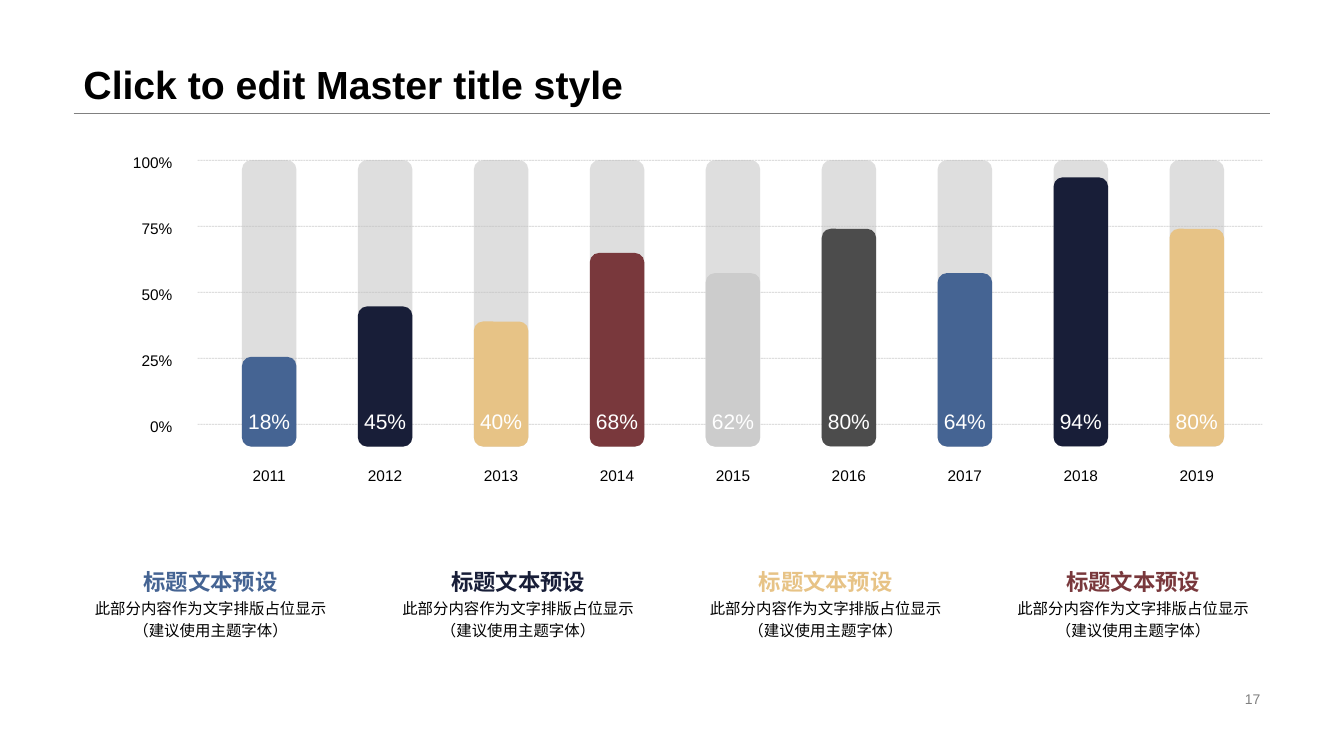
import pptx
import pptx.dml.color
import pptx.enum.dml
import pptx.enum.shapes
import pptx.enum.text
import pptx.oxml.ns
import pptx.util
from dataclasses import dataclass
from lxml import etree

Inches = pptx.util.Inches
Pt = pptx.util.Pt
Align = pptx.enum.text.PP_ALIGN
Anchor = pptx.enum.text.MSO_ANCHOR
qn = pptx.oxml.ns.qn


@dataclass(frozen=True)
class Theme:
    font: str = "Arial"
    black: str = "000000"
    white: str = "FFFFFF"
    gray: str = "808080"
    track: str = "BFBFBF"
    blue: str = "456493"
    navy: str = "181E38"
    sand: str = "E7C386"
    wine: str = "79383C"
    silver: str = "CCCCCC"
    charcoal: str = "4C4C4C"
    title_size: float = 28
    heading_size: float = 16
    value_size: float = 15
    body_size: float = 11
    number_size: float = 10


THEME = Theme()

# year, label, bar height in inches, colour
BARS = [
    ("2011", "18%", 0.89, THEME.blue),
    ("2012", "45%", 1.39, THEME.navy),
    ("2013", "40%", 1.24, THEME.sand),
    ("2014", "68%", 1.92, THEME.wine),
    ("2015", "62%", 1.72, THEME.silver),
    ("2016", "80%", 2.16, THEME.charcoal),
    ("2017", "64%", 1.72, THEME.blue),
    ("2018", "94%", 2.67, THEME.navy),
    ("2019", "80%", 2.16, THEME.sand),
]
AXIS_LABELS = ["100%", "75%", "50%", "25%", "0%"]
HEADING = "标题文本预设"
BODY = "此部分内容作为文字排版占位显示\n（建议使用主题字体）"
CAPTION_COLORS = [THEME.blue, THEME.navy, THEME.sand, THEME.wine]


def rgb(color):
    return pptx.dml.color.RGBColor.from_string(color)


def set_alpha(fill, percent):
    """Make a solid fill, of a shape or a line, partly transparent."""
    color = fill._xPr.find(qn("a:solidFill"))[0]
    etree.SubElement(color, qn("a:alpha")).set("val", str(percent * 1000))


def write(sp, text, size, color, align=Align.LEFT, anchor=Anchor.TOP,
          bold=False, wrap=False, margins=(0.1, 0.05), spacing=None):
    tf = sp.text_frame
    tf.word_wrap = wrap
    tf.vertical_anchor = anchor
    tf.margin_left = tf.margin_right = Inches(margins[0])
    tf.margin_top = tf.margin_bottom = Inches(margins[1])
    p = tf.paragraphs[0]
    p.text = text
    p.alignment = align
    if spacing:
        p.line_spacing = spacing
    for r in p.runs:
        r.font.name = THEME.font
        r.font.size = Pt(size)
        r.font.bold = bold
        r.font.color.rgb = rgb(color)


def add_text(slide, left, top, width, height, *args, **kwargs):
    sp = slide.shapes.add_textbox(Inches(left), Inches(top), Inches(width), Inches(height))
    write(sp, *args, **kwargs)


def add_rule(slide, left, right, y, color, weight):
    line = slide.shapes.add_connector(
        pptx.enum.shapes.MSO_CONNECTOR.STRAIGHT,
        Inches(left), Inches(y), Inches(right), Inches(y))
    line.line.color.rgb = rgb(color)
    line.line.width = Pt(weight)
    etree.SubElement(line._element.spPr, qn("a:effectLst"))
    return line


def add_pill(slide, left, top, width, height, color):
    sp = slide.shapes.add_shape(
        pptx.enum.shapes.MSO_SHAPE.ROUNDED_RECTANGLE,
        Inches(left), Inches(top), Inches(width), Inches(height))
    sp.shadow.inherit = False
    sp.fill.solid()
    sp.fill.fore_color.rgb = rgb(color)
    sp.line.fill.background()
    return sp


def add_header(slide, left, top, width, height):
    add_rule(slide, left, left + width, top + height, THEME.gray, 0.25)
    add_text(slide, left, top, width, height, "Click to edit Master title style",
             THEME.title_size, THEME.black, anchor=Anchor.BOTTOM,
             bold=True, wrap=True, spacing=0.9)


def add_axis(slide, left, top, width, height):
    """Dashed grid lines with their percentages to the left."""
    label_width = 0.6
    step = height / (len(AXIS_LABELS) - 1)
    for i, label in enumerate(AXIS_LABELS):
        y = top + i * step
        grid = add_rule(slide, left, left + width, y, THEME.black, 0.5)
        grid.line.dash_style = pptx.enum.dml.MSO_LINE.SQUARE_DOT
        grid.line._ln.find(qn("a:prstDash")).set("val", "sysDash")
        set_alpha(grid.line.fill, 20)
        add_text(slide, left - 0.15 - label_width, y - 0.12, label_width, 0.28,
                 label, THEME.body_size, THEME.black, Align.RIGHT)


def add_bars(slide, left, top, pitch, bar_width, height):
    bottom = top + height
    for i, (year, label, bar_height, color) in enumerate(BARS):
        x = left + i * pitch
        track = add_pill(slide, x, top, bar_width, height, THEME.track)
        set_alpha(track.fill, 50)
        bar = add_pill(slide, x, bottom - bar_height, bar_width, bar_height, color)
        write(bar, label, THEME.value_size, THEME.white, Align.CENTER,
              Anchor.BOTTOM, margins=(0.1, 0.1))
        add_text(slide, x, bottom + 0.14, bar_width, 0.35, year,
                 THEME.body_size, THEME.black, Align.CENTER)


def add_captions(slide, left, top, pitch, width):
    heading_height = 0.27
    for i, color in enumerate(CAPTION_COLORS):
        x = left + i * pitch
        add_text(slide, x, top + heading_height, width, 0.52, BODY,
                 THEME.body_size, THEME.black, Align.CENTER,
                 wrap=True, margins=(0, 0), spacing=1.2)
        add_text(slide, x, top, width, heading_height, HEADING,
                 THEME.heading_size, color, Align.CENTER,
                 bold=True, margins=(0, 0))


def add_page_number(slide, left, top, width, height):
    add_text(slide, left, top, width, height, "17", THEME.number_size,
             THEME.gray, Align.RIGHT, Anchor.MIDDLE, wrap=True)


def main():
    prs = pptx.Presentation()
    prs.slide_width = Inches(13.33)
    prs.slide_height = Inches(7.5)
    slide = prs.slides.add_slide(prs.slide_layouts[6])
    add_header(slide, 0.73, 0, 11.87, 1.12)
    add_axis(slide, 1.96, 1.59, 10.56, 2.62)
    add_bars(slide, 2.4, 1.59, 1.15, 0.54, 2.84)
    add_captions(slide, 0.89, 5.64, 3.05, 2.4)
    add_page_number(slide, 9.42, 6.82, 3.18, 0.23)
    prs.save("out.pptx")


if __name__ == "__main__":
    main()
